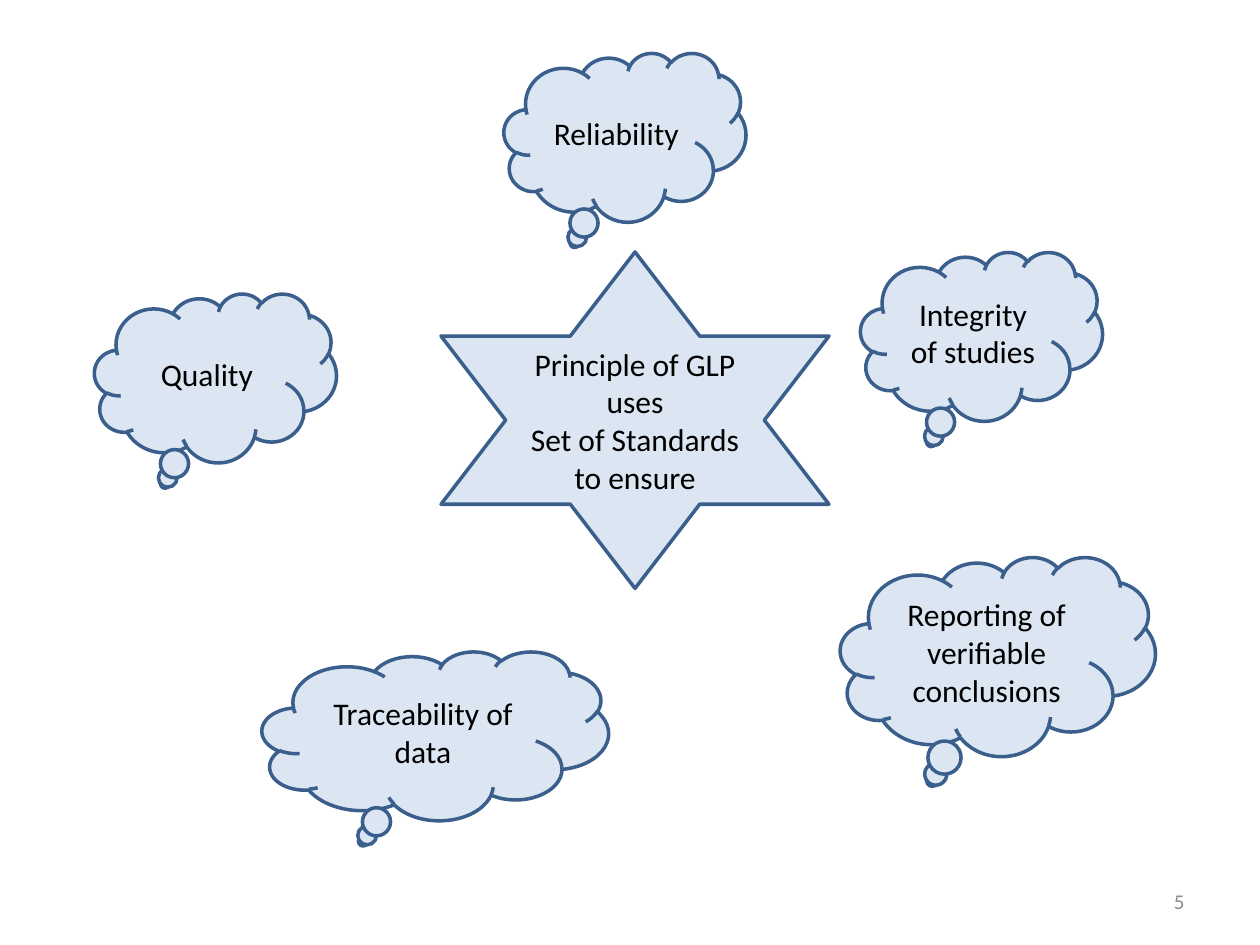
from pptx import Presentation
from pptx.dml.color import RGBColor
from pptx.enum.shapes import MSO_SHAPE
from pptx.enum.text import MSO_ANCHOR, PP_ALIGN
from pptx.util import Inches, Pt

FILL = RGBColor(0xDC, 0xE6, 0xF2)
OUTLINE = RGBColor(0x3A, 0x5F, 0x8C)
BLACK = RGBColor(0x00, 0x00, 0x00)
GRAY = RGBColor(0x8C, 0x8C, 0x8C)


class Diagram:
    """Shared style and the current slide."""

    font = "Calibri"
    size = 18
    line_width = 2

    def __init__(self, slide):
        self.slide = slide

    def set_text(self, sp, text, size, color, align):
        tf = sp.text_frame
        tf.word_wrap = True
        tf.vertical_anchor = MSO_ANCHOR.MIDDLE
        tf.text = text
        for p in tf.paragraphs:
            p.alignment = align
            for r in p.runs:
                r.font.name = self.font
                r.font.size = Pt(size)
                r.font.color.rgb = color

    def shape(self, kind, text, *box):
        sp = self.slide.shapes.add_shape(kind, *map(Inches, box))
        sp.shadow.inherit = False
        sp.fill.solid()
        sp.fill.fore_color.rgb = FILL
        sp.line.color.rgb = OUTLINE
        sp.line.width = Pt(self.line_width)
        self.set_text(sp, text, self.size, BLACK, PP_ALIGN.CENTER)

    def star(self, text, *box):
        self.shape(MSO_SHAPE.STAR_6_POINT, text, *box)

    def cloud(self, text, left, top, width=1.92, height=1.34):
        self.shape(MSO_SHAPE.CLOUD_CALLOUT, text, left, top, width, height)

    def page_number(self, text, *box):
        sp = self.slide.shapes.add_textbox(*map(Inches, box))
        self.set_text(sp, text, 12, GRAY, PP_ALIGN.RIGHT)


def main():
    prs = Presentation()
    prs.slide_width, prs.slide_height = Inches(10), Inches(7.5)
    s = prs.slides.add_slide(prs.slide_layouts[6])
    diagram = Diagram(s)

    # Page number
    diagram.page_number("5", 7.17, 6.95, 2.33, 0.4)

    # Central principle
    diagram.star("Principle of GLP uses\nSet of Standards to ensure",
                 3.5, 2, 3.08, 2.67)

    # Surrounding goals
    diagram.cloud("Reporting of verifiable conclusions", 6.67, 4.42, 2.5, 1.58)
    diagram.cloud("Integrity of studies", 6.83, 2)
    diagram.cloud("Quality", 0.75, 2.33)
    diagram.cloud("Reliability", 4, 0.42)
    diagram.cloud("Traceability of data", 2.08, 5.17, width=2.75)

    prs.save("out.pptx")


if __name__ == "__main__":
    main()
